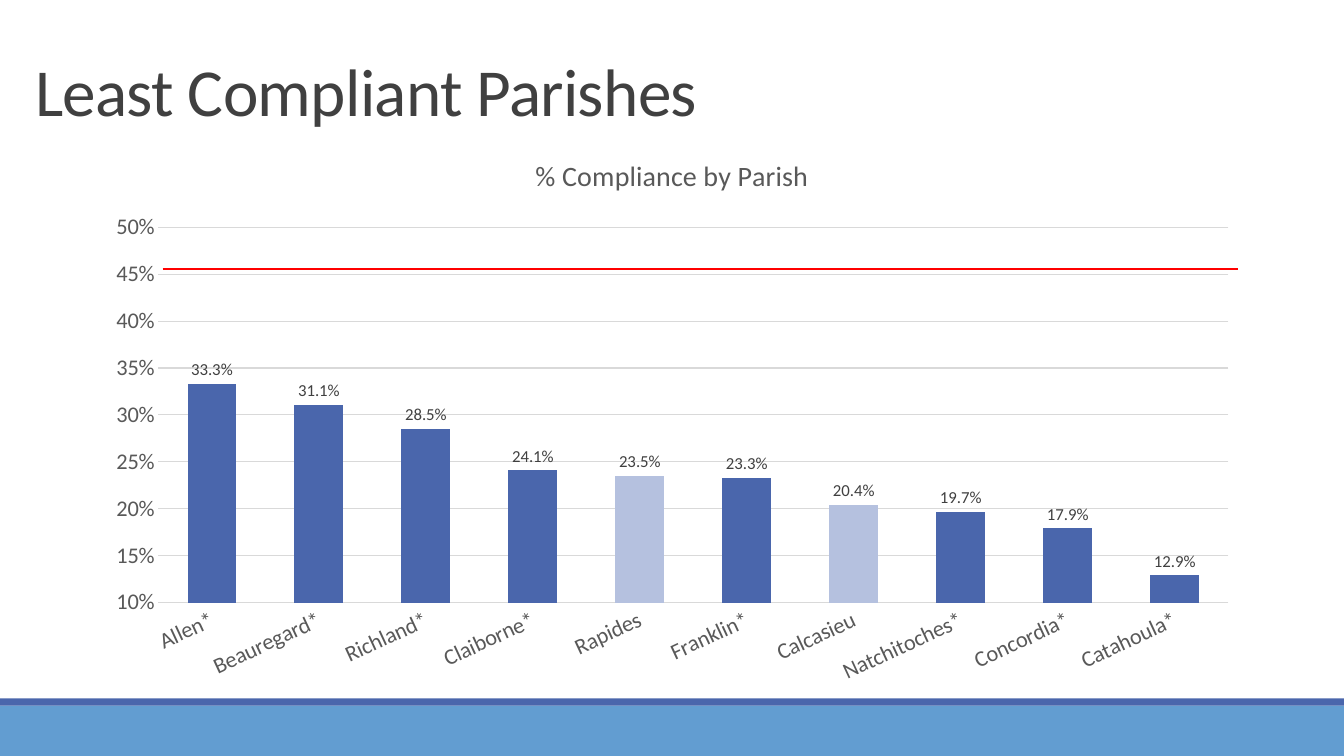
from lxml import etree
from pptx import Presentation, util as u
from pptx.chart.data import CategoryChartData
from pptx.dml.color import RGBColor
from pptx.enum import chart as ch, shapes, text
from pptx.oxml import parse_xml
from pptx.oxml.ns import nsdecls, qn

PX = 9525
NAVY = RGBColor(0x4A, 0x66, 0xAC)
PALE = RGBColor(0xB5, 0xC1, 0xDF)
SKY = RGBColor(0x62, 0x9D, 0xD1)
INK = RGBColor(0x40, 0x40, 0x40)
GRAY = RGBColor(0x59, 0x59, 0x59)
RULE = RGBColor(0xD9, 0xD9, 0xD9)
RED = RGBColor(0xFF, 0x00, 0x00)

COMPLIANCE = {
    "Allen*": 0.333, "Beauregard*": 0.311, "Richland*": 0.285,
    "Claiborne*": 0.241, "Rapides": 0.235, "Franklin*": 0.233,
    "Calcasieu": 0.204, "Natchitoches*": 0.197, "Concordia*": 0.179,
    "Catahoula*": 0.129,
}


class SlideBuilder:
    """Draws styled elements on one slide, with lengths in px."""

    def __init__(self, deck, font):
        self.slide = deck.slides.add_slide(deck.slide_layouts[5])
        self.font = font

    def style(self, font, size, color):
        font.name, font.size, font.bold = self.font, u.Pt(size), False
        font.color.rgb = color

    def rule(self, line, color, width):
        line.color.rgb = color
        line.width = u.Pt(width)

    def band(self, x, y, w, h, color):
        band = self.slide.shapes.add_shape(
            shapes.MSO_SHAPE.RECTANGLE, x * PX, y * PX, w * PX, h * PX)
        band.shadow.inherit = False
        band.fill.solid()
        band.fill.fore_color.rgb = color
        band.line.fill.background()

    def title(self, words, x, y, w, h, size):
        heading = self.slide.shapes.title
        heading.left, heading.top = x * PX, y * PX
        heading.width, heading.height = w * PX, h * PX
        frame = heading.text_frame
        frame.text = words
        frame.word_wrap = True
        frame.auto_size = text.MSO_AUTO_SIZE.NONE
        frame.vertical_anchor = text.MSO_ANCHOR.BOTTOM
        line = frame.paragraphs[0]
        line.alignment = text.PP_ALIGN.LEFT
        line.line_spacing = 0.85
        self.style(line.font, size, INK)
        line.runs[0].font._element.set("spc", "-50")

    def threshold(self, x1, x2, y, color):
        target = self.slide.shapes.add_connector(
            shapes.MSO_CONNECTOR.STRAIGHT, x1 * PX, y * PX, x2 * PX, y * PX)
        self.rule(target.line, color, 1.5)
        etree.SubElement(target._element.spPr, qn("a:effectLst"))

    def columns(self, caption, values, pale, x, y, w, h):
        data = CategoryChartData(number_format="0.0%")
        data.categories = list(values)
        data.add_series("Series 1", list(values.values()))
        chart = self.slide.shapes.add_chart(
            ch.XL_CHART_TYPE.COLUMN_CLUSTERED,
            x * PX, y * PX, w * PX, h * PX, data).chart
        self.style(chart.font, 10, INK)
        chart.has_legend = False
        chart.has_title = True
        chart.chart_title.text_frame.text = caption
        self.style(chart.chart_title.text_frame.paragraphs[0].font, 20, GRAY)
        chart.chart_title.include_in_layout = False
        self.axes(chart)
        self.place_plot(chart, x=0.057, y=0.165, w=0.923, h=0.667)

        plot = chart.plots[0]
        plot.gap_width, plot.overlap = 119, -11
        plot.vary_by_categories = False
        parishes = plot.series[0]
        for fill in (parishes.format.fill,
                     *(parishes.points[list(values).index(name)].format.fill
                       for name in pale)):
            fill.solid()
            fill.fore_color.rgb = PALE
        parishes.format.fill.fore_color.rgb = NAVY
        labels = parishes.data_labels
        labels.show_value = True
        labels.number_format, labels.number_format_is_linked = "0.0%", False
        labels.position = ch.XL_LABEL_POSITION.OUTSIDE_END
        self.style(labels.font, 12, INK)

    def axes(self, chart):
        parish, percent = chart.category_axis, chart.value_axis
        for axis in (parish, percent):
            axis.major_tick_mark = axis.minor_tick_mark = ch.XL_TICK_MARK.NONE
            self.style(axis.tick_labels.font, 16, GRAY)
        parish._element.txPr.find(qn("a:bodyPr")).set("rot", "-1500000")
        self.rule(parish.format.line, RULE, 0.75)
        percent.format.line.fill.background()
        percent.minimum_scale, percent.maximum_scale = 0.1, 0.5
        percent.major_unit = 0.05
        percent.tick_labels.number_format = "0%"
        percent.tick_labels.number_format_is_linked = False
        self.rule(percent.major_gridlines.format.line, RULE, 0.75)

    def place_plot(self, chart, **box):
        area = chart._chartSpace.chart.plotArea
        for auto in area.findall(qn("c:layout")):
            area.remove(auto)
        sizes = "".join(f'<c:{k} val="{v}"/>' for k, v in box.items())
        area.insert(0, parse_xml(
            f'<c:layout {nsdecls("c")}><c:manualLayout>'
            '<c:layoutTarget val="inner"/><c:xMode val="edge"/>'
            f'<c:yMode val="edge"/>{sizes}</c:manualLayout></c:layout>'))


def main():
    deck = Presentation()
    deck.slide_width, deck.slide_height = 1280 * PX, 720 * PX
    page = SlideBuilder(deck, "Calibri")
    page.band(0, 672, 1280, 48, SKY)
    page.band(0, 665, 1280, 7, NAVY)
    page.title("Least Compliant Parishes", 24, -24, 1056, 153, 48)
    page.columns("% Compliance by Parish", COMPLIANCE,
                 ("Rapides", "Calcasieu"), 88, 128, 1104, 536)
    page.threshold(155, 1179, 256, RED)
    deck.save("out.pptx")


if __name__ == "__main__":
    main()
